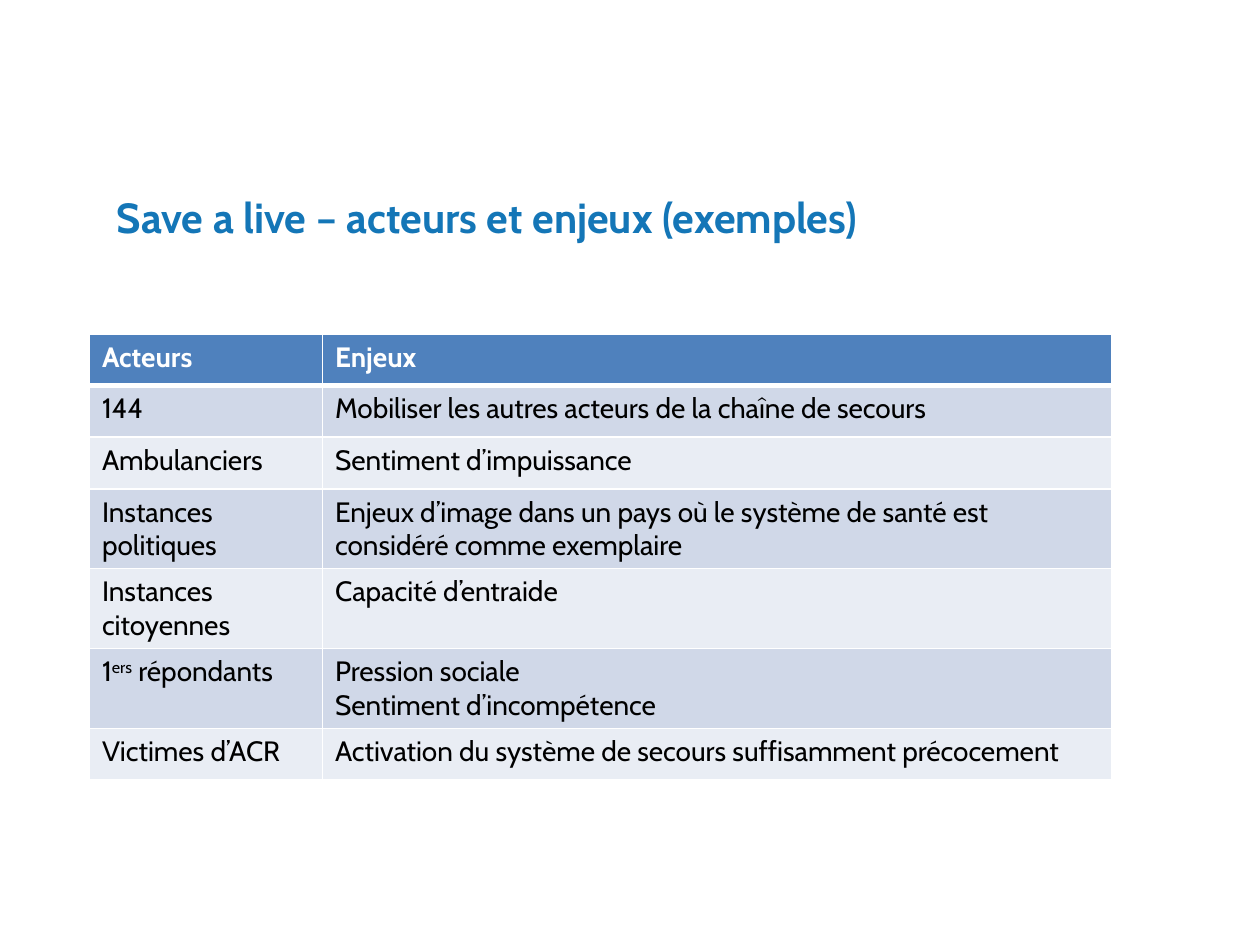
"""Build a slide with a table of actors and what is at stake for them."""
from lxml import etree
from pptx import Presentation
from pptx.dml.color import RGBColor
from pptx.enum import text
from pptx.oxml import ns
from pptx.util import Inches, Pt

TITLE_BLUE = RGBColor(0x14, 0x76, 0xB7)
HEADER_BLUE = RGBColor(0x4F, 0x81, 0xBD)
BAND_DARK = RGBColor(0xD0, 0xD8, 0xE8)
BAND_LIGHT = RGBColor(0xE9, 0xED, 0xF4)
WHITE = RGBColor(0xFF, 0xFF, 0xFF)
BLACK = RGBColor(0, 0, 0)

ROWS = [
    ("Acteurs", "Enjeux"),
    ("144", "Mobiliser les autres acteurs de la chaîne de secours"),
    ("Ambulanciers", "Sentiment d’impuissance"),
    ("Instances politiques",
     "Enjeux d’image dans un pays où le système de santé est considéré comme exemplaire"),
    ("Instances citoyennes", "Capacité d’entraide"),
    ("1^ers^ répondants", "Pression sociale\nSentiment d’incompétence"),
    ("Victimes d’ACR", "Activation du système de secours suffisamment précocement"),
]


def write(frame, content, size=16, color=BLACK, bold=False):
    """Fill a text frame, raising the parts set between carets."""
    frame.word_wrap = True
    for index, line in enumerate(content.split("\n")):
        paragraph = frame.add_paragraph() if index else frame.paragraphs[0]
        for position, part in enumerate(line.split("^")):
            run = paragraph.add_run()
            run.text = part
            run.font.name = "Cabin"
            run.font.size = Pt(size)
            run.font.bold = bold
            run.font.color.rgb = color
            if position % 2:
                run.font._element.set("baseline", "30000")


def add_border(cell, side, width):
    """Draw one white edge of a table cell."""
    properties = cell._tc.get_or_add_tcPr()
    line = etree.SubElement(properties, ns.qn(f"a:ln{side}"), w=str(Pt(width)))
    fill = etree.SubElement(line, ns.qn("a:solidFill"))
    etree.SubElement(fill, ns.qn("a:srgbClr"), val=str(WHITE))


presentation = Presentation()
presentation.slide_width = Inches(10)
presentation.slide_height = Inches(7.5)
slide = presentation.slides.add_slide(presentation.slide_layouts[6])

title = slide.shapes.add_textbox(Inches(0.83), Inches(1.47), Inches(7.87), Inches(0.5))
write(title.text_frame, "Save a live – acteurs et enjeux (exemples)",
      size=24, color=TITLE_BLUE, bold=True)
title.text_frame.auto_size = text.MSO_AUTO_SIZE.SHAPE_TO_FIT_TEXT

table = slide.shapes.add_table(len(ROWS), 2, Inches(0.71), Inches(2.65),
                               Inches(8.11), Inches(0.41 * len(ROWS))).table
for column, width in zip(table.columns, (1.85, 6.26)):
    column.width = Inches(width)

for row_index, row in enumerate(ROWS):
    is_header = row_index == 0
    band = BAND_DARK if row_index % 2 else BAND_LIGHT
    for column_index, content in enumerate(row):
        cell = table.cell(row_index, column_index)
        for side in "LRTB":
            thick = (is_header and side == "B") or (row_index == 1 and side == "T")
            add_border(cell, side, 3 if thick else 1)
        cell.fill.solid()
        cell.fill.fore_color.rgb = HEADER_BLUE if is_header else band
        write(cell.text_frame, content, color=WHITE if is_header else BLACK, bold=is_header)

presentation.save("out.pptx")
